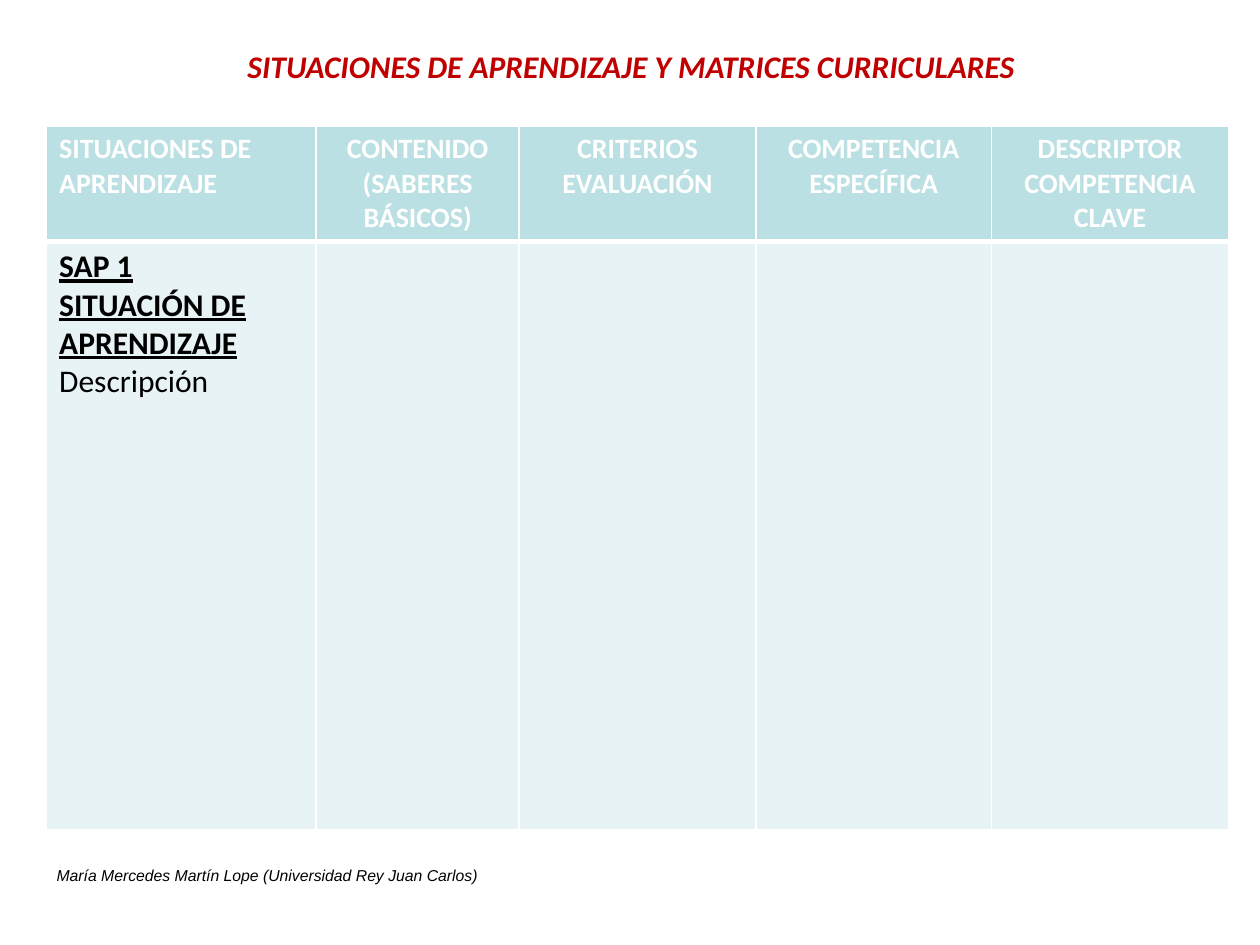
from dataclasses import dataclass, field

from lxml.etree import SubElement
from pptx import Presentation
from pptx.dml.color import RGBColor
from pptx.enum.text import MSO_ANCHOR as Anchor, PP_ALIGN as Align
from pptx.oxml.ns import qn
from pptx.util import Inches, Pt

WHITE, BLACK, RED = "FFFFFF", "000000", "C00000"
HEADER_FILL, BODY_FILL = "BBE0E3", "E7F3F4"

HEADER = dict(name="Calibri", size=Pt(16), bold=True)
SITUATION = dict(name="Calibri", size=Pt(18), bold=True, underline=True)
DESCRIPTION = dict(name="Calibri", size=Pt(18), bold=False, underline=False)
TITLE = dict(name="Calibri", size=Pt(18), bold=True, italic=True)
CREDIT = dict(name="Arial", size=Pt(9), italic=True)


@dataclass
class Line:
    text: str
    style: dict
    color: str
    align: Align = Align.LEFT


@dataclass
class Column:
    width: float
    heading: list[str]
    align: Align = Align.CENTER
    body: list[Line] = field(default_factory=list)


COLUMNS = [
    Column(2.14, ["SITUACIONES DE APRENDIZAJE"], Align.LEFT, [
        Line("SAP 1", SITUATION, BLACK),
        Line("SITUACIÓN DE APRENDIZAJE", SITUATION, BLACK),
        Line("Descripción", DESCRIPTION, BLACK),
    ]),
    Column(1.61, ["CONTENIDO (SABERES BÁSICOS)"]),
    Column(1.88, ["CRITERIOS", "EVALUACIÓN"]),
    Column(1.87, ["COMPETENCIA ESPECÍFICA"]),
    Column(1.88, ["DESCRIPTOR COMPETENCIA CLAVE"]),
]
ROW_HEIGHTS = [0.91, 4.67]


def rgb(color: str) -> RGBColor:
    return RGBColor.from_string(color)


def write(frame, lines: list[Line]) -> None:
    for index, line in enumerate(lines):
        paragraph = frame.add_paragraph() if index else frame.paragraphs[0]
        paragraph.alignment = line.align
        run = paragraph.add_run()
        run.text = line.text
        for attribute, value in line.style.items():
            setattr(run.font, attribute, value)
        run.font.color.rgb = rgb(line.color)


def add_text(slide, box: tuple, line: Line, anchor=Anchor.TOP, margins=(0.1, 0.05, 0.1, 0.05)) -> None:
    frame = slide.shapes.add_textbox(*map(Inches, box)).text_frame
    frame.word_wrap = True
    frame.vertical_anchor = anchor
    for side, margin in zip(("left", "top", "right", "bottom"), margins):
        setattr(frame, f"margin_{side}", Inches(margin))
    write(frame, [line])


def format_cell(cell, fill: str, top: int, bottom: int, lines: list[Line]) -> None:
    properties = cell._tc.get_or_add_tcPr()
    # Borders come before the fill in the cell properties
    for side, points in dict(L=1, R=1, T=top, B=bottom).items():
        border = SubElement(properties, qn(f"a:ln{side}"), w=str(Pt(points)))
        solid = SubElement(border, qn("a:solidFill"))
        SubElement(solid, qn("a:srgbClr"), val=WHITE)
    cell.fill.solid()
    cell.fill.fore_color.rgb = rgb(fill)
    write(cell.text_frame, lines)


def add_matrix(slide, left: float, top: float) -> None:
    width = sum(column.width for column in COLUMNS)
    matrix = slide.shapes.add_table(
        len(ROW_HEIGHTS), len(COLUMNS),
        Inches(left), Inches(top), Inches(width), Inches(sum(ROW_HEIGHTS))).table
    matrix.horz_banding = False
    for row, height in zip(matrix.rows, ROW_HEIGHTS):
        row.height = Inches(height)
    for index, column in enumerate(COLUMNS):
        matrix.columns[index].width = Inches(column.width)
        heading = [Line(text, HEADER, WHITE, column.align) for text in column.heading]
        format_cell(matrix.cell(0, index), HEADER_FILL, 1, 3, heading)
        format_cell(matrix.cell(1, index), BODY_FILL, 3, 1, column.body)


def main() -> None:
    deck = Presentation()
    deck.slide_width, deck.slide_height = Inches(10), Inches(7.5)
    slide = deck.slides.add_slide(deck.slide_layouts[6])

    # Curriculum matrix
    add_matrix(slide, 0.37, 1)

    # Title
    add_text(slide, (0.12, 0.05, 9.76, 0.94),
             Line("SITUACIONES DE APRENDIZAJE Y MATRICES CURRICULARES", TITLE, RED, Align.CENTER),
             Anchor.MIDDLE, (0.03, 0.03, 0.01, 0.03))

    # Author credit
    add_text(slide, (0.35, 6.82, 8.11, 0.25),
             Line("María Mercedes Martín Lope (Universidad Rey Juan Carlos)", CREDIT, BLACK))

    deck.save("out.pptx")


if __name__ == "__main__":
    main()
